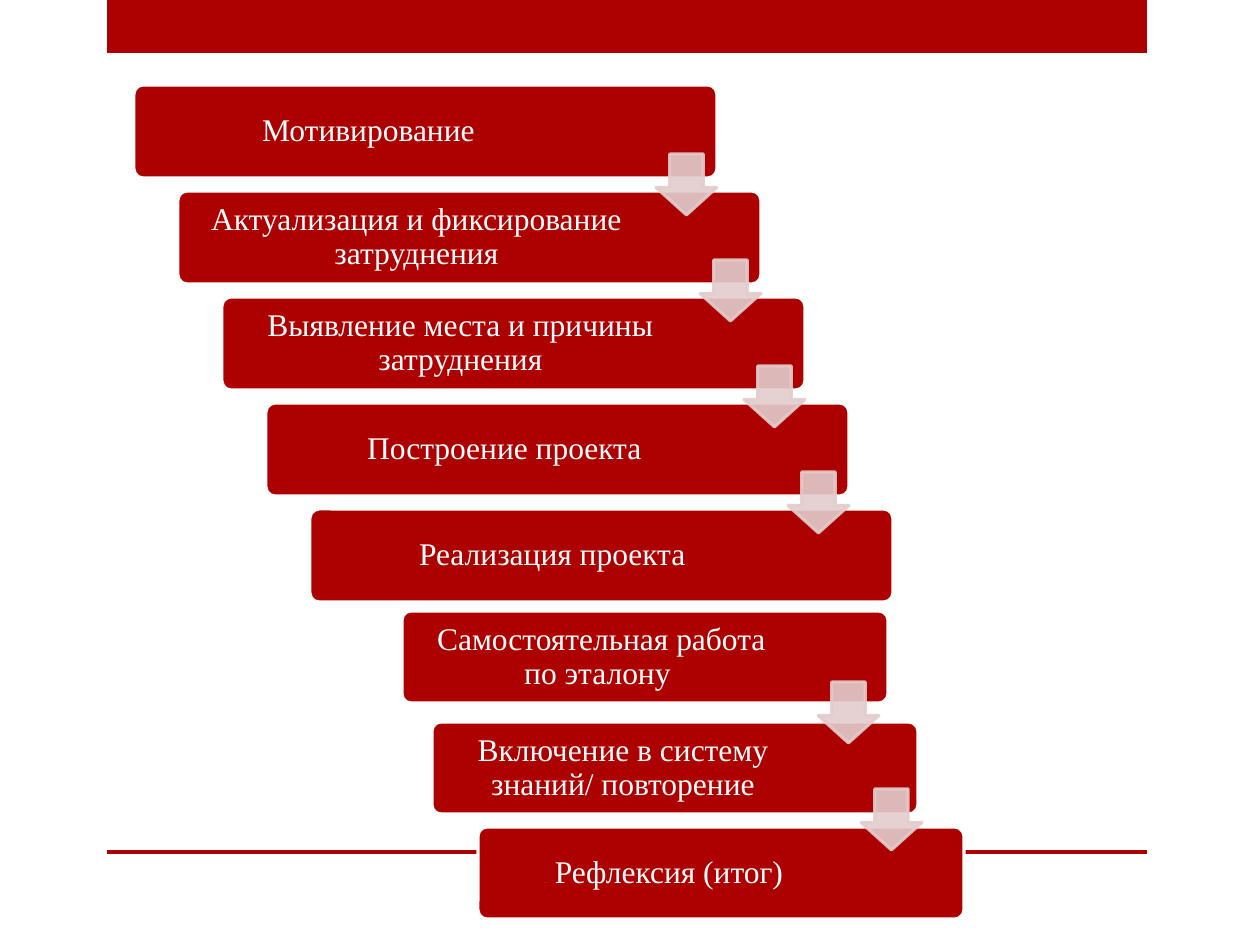
import pptx
import pptx.util
import pptx.dml.color
import pptx.enum.shapes
import pptx.enum.text
import pptx.oxml
import pptx.oxml.ns

PX = 914400 // 126  # EMU in one px
COLORS = {"red": "AD0101", "arrow": "E3CCCC", "white": "FFFFFF"}
SHAPES = pptx.enum.shapes.MSO_SHAPE

UPPER_STEPS = [
    "Мотивирование ",
    "Актуализация и фиксирование затруднения",
    "Выявление места и причины затруднения",
    "Построение проекта",
    " Реализация проекта",
]
LOWER_STEPS = [  # text, left, top, right inset
    (" Самостоятельная работа по эталону", 402, 611, 106),
    ("Включение в систему знаний/ повторение", 432, 722, 115),
    ("Рефлексия (итог)", 478, 827, 115),
]
STEP_X, STEP_Y = 44, 106
UPPER_ARROWS = [(656 + STEP_X * i, 154 + STEP_Y * i) for i in range(4)]
LOWER_ARROWS = [(818, 682), (861, 789)]

prs = pptx.Presentation()
prs.slide_width = pptx.util.Inches(10)
prs.slide_height = pptx.util.Inches(7.5)
slide = prs.slides.add_slide(prs.slide_layouts[6])


def add_block(kind, left, top, width, height, fill, line=None):
    block = slide.shapes.add_shape(kind, left * PX, top * PX, width * PX, height * PX)
    block.shadow.inherit = False
    block.fill.solid()
    block.fill.fore_color.rgb = pptx.dml.color.RGBColor.from_string(COLORS[fill])
    if line:
        block.line.color.rgb = pptx.dml.color.RGBColor.from_string(COLORS[line])
        block.line.width = pptx.util.Pt(1.75)
    else:
        block.line.fill.background()
    return block


def add_step(text, left, top, width, height, inset_right):
    step = add_block(SHAPES.ROUNDED_RECTANGLE, left, top, width, height, "red", "white")
    step.adjustments[0] = 0.1
    frame = step.text_frame
    frame.word_wrap = True
    frame.vertical_anchor = pptx.enum.text.MSO_ANCHOR.MIDDLE
    frame.margin_left, frame.margin_right = 11 * PX, inset_right * PX
    frame.margin_top = frame.margin_bottom = 9 * PX
    frame.text = text
    paragraph = frame.paragraphs[0]
    paragraph.alignment = pptx.enum.text.PP_ALIGN.CENTER
    paragraph.line_spacing = 0.9
    font = paragraph.runs[0].font
    font.name = "Times New Roman"
    font.size = pptx.util.Pt(18)
    font.color.rgb = pptx.dml.color.RGBColor.from_string(COLORS["white"])


# Red bands at the top and bottom
for top, height in [(0, 53), (850, 4)]:
    add_block(SHAPES.RECTANGLE, 107, top, 1040, height, "red")

# Staircase of steps
for i, text in enumerate(UPPER_STEPS):
    add_step(text, 134 + STEP_X * i, 85 + STEP_Y * i, 583, 93, 117)
for text, left, top, inset_right in LOWER_STEPS:
    add_step(text, left, top, 486, 92, inset_right)

# Translucent arrows between steps
for left, top in UPPER_ARROWS + LOWER_ARROWS:
    arrow = add_block(SHAPES.DOWN_ARROW, left, top, 61, 61, "arrow", "arrow")
    arrow.adjustments[0] = 0.55
    arrow.adjustments[1] = 0.45
    for color in arrow._element.spPr.iter(pptx.oxml.ns.qn("a:srgbClr")):
        alpha = pptx.oxml.parse_xml(
            f'<a:alpha {pptx.oxml.ns.nsdecls("a")} val="90000"/>')
        color.append(alpha)

prs.save("out.pptx")
